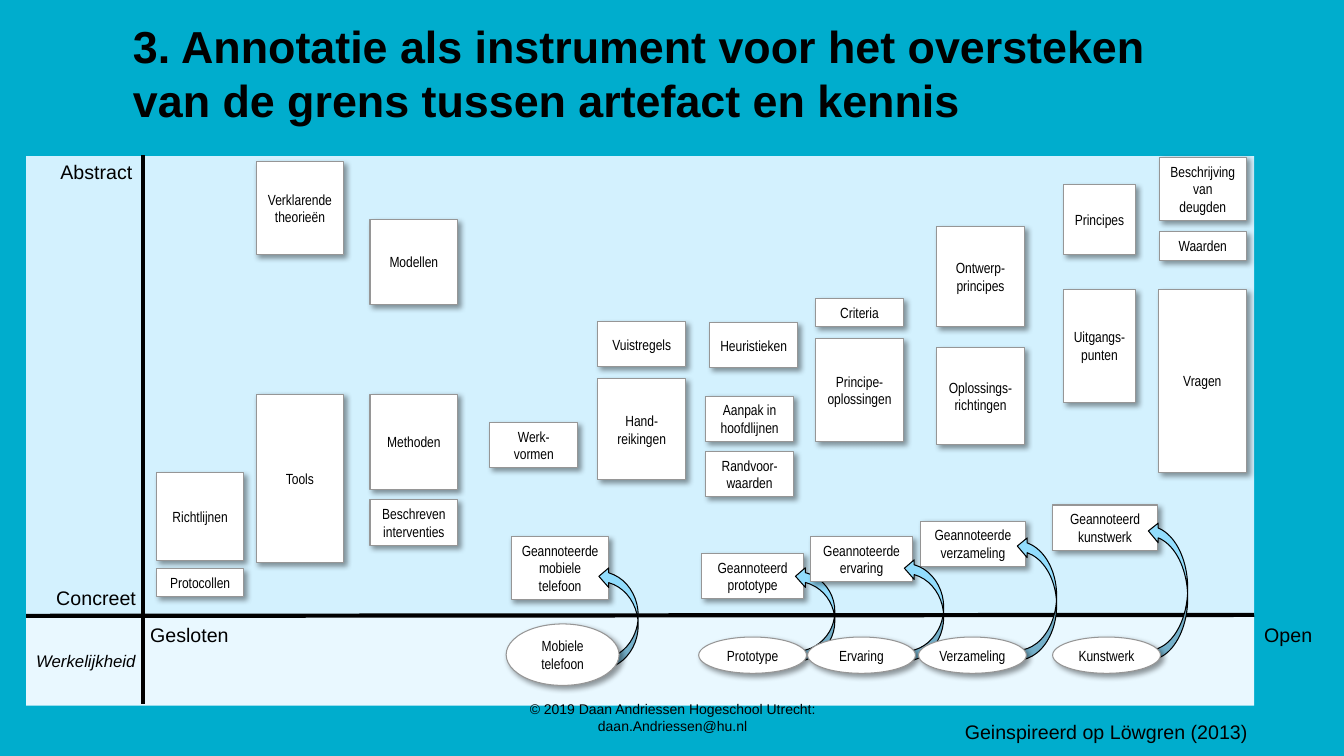
from lxml.etree import SubElement
from pptx import Presentation
from pptx.dml.color import RGBColor
from pptx.enum.shapes import MSO_CONNECTOR, MSO_SHAPE
from pptx.enum.text import MSO_ANCHOR, PP_ALIGN
from pptx.oxml.ns import qn
from pptx.util import Inches, Pt


def colour(value):
    return RGBColor.from_string(value)


class ConceptMap:
    label = {"name": "Arial", "size": Pt(14)}
    card = {"name": "Arial Narrow", "size": Pt(10.5)}
    black, white, grey = "000000", "FFFFFF", "969696"

    def __init__(self, deck, background):
        self.page = deck.slides.add_slide(deck.slide_layouts[6])
        fill = self.page.background.fill
        fill.solid()
        fill.fore_color.rgb = colour(background)

    def fill_text(self, shape, words, style, align=PP_ALIGN.LEFT,
                  anchor=MSO_ANCHOR.TOP, wrap=True, insets=(0.1, 0.05)):
        frame = shape.text_frame
        across, down = (Inches(inset) for inset in insets)
        settings = {"word_wrap": wrap, "vertical_anchor": anchor,
                    "margin_left": across, "margin_right": across,
                    "margin_top": down, "margin_bottom": down}
        for name, value in settings.items():
            setattr(frame, name, value)
        frame.text = words
        for para in frame.paragraphs:
            para.alignment = align
            for span in para.runs:
                for name, value in style.items():
                    setattr(span.font, name, value)
                span.font.color.rgb = colour(self.black)

    def text(self, words, place, style=None, **layout):
        box = self.page.shapes.add_textbox(*map(Inches, place))
        self.fill_text(box, words, style or self.label, **layout)

    def shape(self, kind, place, fill, line=None):
        shape = self.page.shapes.add_shape(kind, *map(Inches, place))
        shape.shadow.inherit = False
        shape.fill.solid()
        shape.fill.fore_color.rgb = colour(fill)
        if line:
            shape.line.color.rgb = colour(line)
            shape.line.width = Pt(0.75)
        else:
            shape.line.fill.background()
        return shape

    def note(self, words, place, kind=MSO_SHAPE.RECTANGLE, insets=(0.09, 0.05)):
        shape = self.shape(kind, place, self.white, self.grey)
        effects = shape._element.spPr.find(qn("a:effectLst"))
        shadow = SubElement(effects, qn("a:outerShdw"), blurRad=str(Pt(4)),
                            dist=str(Pt(3)), dir="2700000", rotWithShape="0")
        tint = SubElement(shadow, qn("a:srgbClr"), val=self.black)
        SubElement(tint, qn("a:alpha"), val="40000")
        self.fill_text(shape, words, self.card, PP_ALIGN.CENTER,
                       MSO_ANCHOR.MIDDLE, insets=insets)

    def oval(self, words, place):
        self.note(words, place, MSO_SHAPE.OVAL, (0, 0.04))

    def arrow(self, place):
        shape = self.shape(MSO_SHAPE.CURVED_RIGHT_ARROW, place, "92DDFD", self.black)
        frame = shape._element.spPr.find(qn("a:xfrm"))
        for flip in ("flipH", "flipV"):
            frame.set(flip, "1")

    def axis(self, *ends):
        line = self.page.shapes.add_connector(MSO_CONNECTOR.STRAIGHT, *map(Inches, ends))
        line.line.color.rgb = colour(self.black)
        line.line.width = Pt(3)
        SubElement(line._element.spPr, qn("a:effectLst"))


# Concept columns: left, width, then (text, top, height)
COLUMNS = [
    (1.55, 0.87, [("Richtlijnen", 4.69, 0.87), ("Protocollen", 5.64, 0.28)]),
    (2.54, 0.87, [("Verklarende theorieën", 1.6, 0.93), ("Tools", 3.91, 1.67)]),
    (3.67, 0.87, [("Modellen", 2.18, 0.84), ("Methoden", 3.91, 0.95),
                  ("Beschreven interventies", 4.96, 0.45)]),
    (4.86, 0.87, [("Werk-vormen", 4.19, 0.45)]),
    (5.93, 0.87, [("Vuistregels", 3.19, 0.45), ("Hand-reikingen", 3.76, 1)]),
    (7.04, 0.87, [("Heuristieken", 3.2, 0.45)]),
    (7, 0.87, [("Aanpak in hoofdlijnen", 3.93, 0.45), ("Randvoor-waarden", 4.48, 0.45)]),
    (8.09, 0.87, [("Criteria", 2.96, 0.28), ("Principe-oplossingen", 3.36, 1.02)]),
    (9.29, 0.87, [("Ontwerp-principes", 2.25, 0.99),
                  ("Oplossings-richtingen", 3.45, 0.96)]),
    (10.55, 0.71, [("Principes", 1.83, 0.7), ("Uitgangs-punten", 2.87, 1.12)]),
    (11.5, 0.86, [("Beschrijving van deugden", 1.56, 0.63), ("Waarden", 2.3, 0.28)]),
    (11.49, 0.87, [("Vragen", 2.87, 1.82)]),
]

# Annotated artefacts: text, box, then arrow left, top and height
ANNOTATIONS = [
    ("Geannoteerde mobiele telefoon", (5.07, 5.32, 0.97, 0.63), 5.94, 5.62, 1.02),
    ("Geannoteerd prototype", (6.96, 5.49, 1.01, 0.45), 7.89, 5.62, 0.94),
    ("Geannoteerde verzameling", (9.13, 5.17, 1.04, 0.45), 10.09, 5.32, 1.23),
    ("Geannoteerd\nkunstwerk", (10.44, 5.01, 1.04, 0.45), 11.39, 5.17, 1.38),
    ("Geannoteerde ervaring", (8.04, 5.32, 1.01, 0.45), 8.97, 5.54, 1.02),
]

ARTEFACTS = [("Prototype", 6.93), ("Ervaring", 8.01),
             ("Verzameling", 9.11), ("Kunstwerk", 10.44)]

AXIS_LABELS = [("Abstract", (0.5, 1.54, 0.92, 0.34)),
               ("Concreet", (0.46, 5.76, 1, 0.34)),
               ("Gesloten", (1.39, 6.13, 0.99, 0.34)),
               ("Open", (12.44, 6.13, 0.68, 0.34))]


def main():
    deck = Presentation()
    deck.slide_width, deck.slide_height = Inches(13.33), Inches(7.5)
    chart = ConceptMap(deck, "00ADCD")

    # Title
    chart.text("3. Annotatie als instrument voor het oversteken van de grens "
               "tussen artefact en kennis", (1.22, 0.12, 10.48, 1.18),
               {"name": "Arial", "size": Pt(32), "bold": True},
               anchor=MSO_ANCHOR.BOTTOM)

    # Zones and axes
    reality = chart.shape(MSO_SHAPE.RECTANGLE, (0.26, 6.11, 12.18, 0.89), "E9F8FF")
    chart.fill_text(reality, "Werkelijkheid",
                    {"name": "Arial", "size": Pt(12), "italic": True},
                    anchor=MSO_ANCHOR.MIDDLE)
    chart.shape(MSO_SHAPE.RECTANGLE, (0.26, 1.55, 12.18, 4.55), "D3F1FE")
    chart.axis(1.42, 1.54, 1.42, 6.98)
    chart.axis(12.44, 6.1, 0.26, 6.11)
    for words, place in AXIS_LABELS:
        chart.text(words, place, wrap=False)

    # Concepts
    for left, width, notes in COLUMNS:
        for words, top, height in notes:
            chart.note(words, (left, top, width, height))

    # Artefacts and their annotations
    for words, place, left, top, height in ANNOTATIONS:
        chart.note(words, place)
        chart.arrow((left, top, 0.39, height))
    chart.oval("Mobiele telefoon", (5.02, 6.19, 1.12, 0.61))
    for words, left in ARTEFACTS:
        chart.oval(words, (left, 6.32, 1.07, 0.36))

    # Footer
    chart.text("Geinspireerd op Löwgren (2013)", (9.47, 7.09, 3.02, 0.34), wrap=False)
    chart.text("© 2019 Daan Andriessen Hogeschool Utrecht: daan.Andriessen@hu.nl",
               (4.56, 6.83, 4.22, 0.5), {"name": "Arial", "size": Pt(10)},
               align=PP_ALIGN.CENTER, anchor=MSO_ANCHOR.BOTTOM, wrap=False)

    deck.save("out.pptx")


if __name__ == "__main__":
    main()
